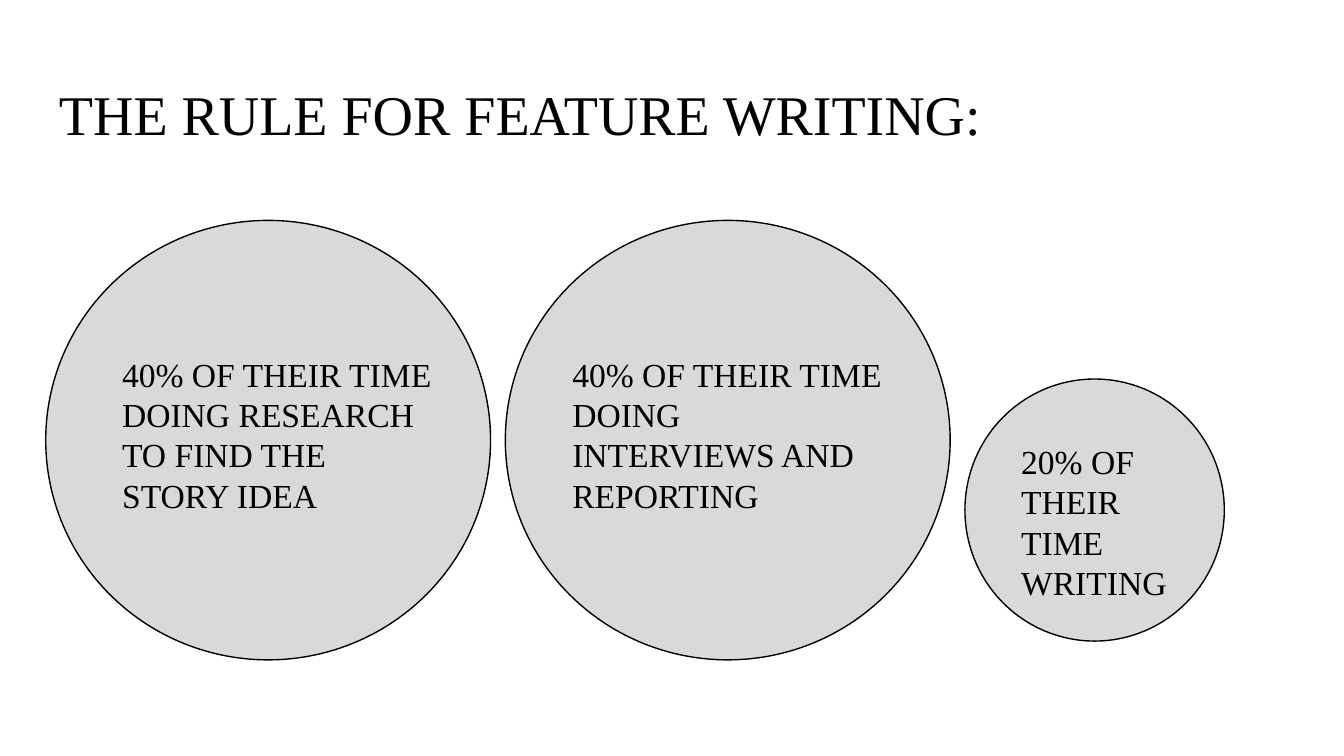
from dataclasses import dataclass

from pptx import Presentation
from pptx.dml import color
from pptx.enum import shapes, text
from pptx.util import Inches, Pt

WIDTH = 10
HEIGHT = WIDTH * 9 / 16
MARGIN = 0.034 * WIDTH
GAP = 0.011 * WIDTH
FONT = "Times New Roman"
BLACK, GREY = "000000", "D9D9D9"


@dataclass(frozen=True)
class Box:
    """A rectangle in inches."""

    left: float
    top: float
    width: float
    height: float

    def lengths(self) -> list[int]:
        """Return the rectangle as slide lengths."""
        return [Inches(n) for n in (self.left, self.top, self.width, self.height)]


@dataclass(frozen=True)
class Share:
    """A circle for a share of time, with its label's offset and width."""

    label: str
    top: float
    width: float
    height: float
    label_left: float
    label_top: float
    label_width: float


SHARES = (
    Share("40% OF THEIR TIME DOING RESEARCH TO FIND THE STORY IDEA",
          1.64, 3.31, 3.27, 0.47, 2.53, 2.52),
    Share("40% OF THEIR TIME DOING INTERVIEWS AND REPORTING",
          1.64, 3.31, 3.27, 0.4, 2.53, 2.52),
    Share("20% OF THEIR TIME WRITING",
          2.82, 1.93, 1.95, 0.32, 3.18, 1.37),
)


def rgb(value: str) -> color.RGBColor:
    """Turn a hex string into a colour."""
    return color.RGBColor.from_string(value)


def add_label(slide, words: str, box: Box, size: float) -> None:
    """Add wrapped text at the top of a box."""
    frame = slide.shapes.add_textbox(*box.lengths()).text_frame
    frame.word_wrap = True
    frame.vertical_anchor = text.MSO_ANCHOR.TOP
    frame.margin_left = frame.margin_right = Inches(0.1)
    frame.margin_top = frame.margin_bottom = Inches(0.1)
    paragraph = frame.paragraphs[0]
    paragraph.text = words
    paragraph.font.name = FONT
    paragraph.font.size = Pt(size)
    paragraph.font.color.rgb = rgb(BLACK)


def add_circle(slide, box: Box) -> None:
    """Add a grey circle with a thin black outline."""
    shape = slide.shapes.add_shape(shapes.MSO_SHAPE.OVAL, *box.lengths())
    shape.shadow.inherit = False
    shape.fill.solid()
    shape.fill.fore_color.rgb = rgb(GREY)
    shape.line.color.rgb = rgb(BLACK)
    shape.line.width = Pt(0.75)


def add_shares(slide) -> None:
    """Lay the circles out in a row with equal gaps."""
    left = MARGIN
    for share in SHARES:
        add_circle(slide, Box(left, share.top, share.width, share.height))
        label_box = Box(left + share.label_left, share.label_top, share.label_width, 1.59)
        add_label(slide, share.label, label_box, 18)
        left += share.width + GAP


def main() -> None:
    """Build and save the slide."""
    presentation = Presentation()
    presentation.slide_width = Inches(WIDTH)
    presentation.slide_height = Inches(HEIGHT)
    slide = presentation.slides.add_slide(presentation.slide_layouts[6])
    title_box = Box(MARGIN, 0.49, WIDTH - 2 * MARGIN, 0.63)
    add_label(slide, "THE RULE FOR FEATURE WRITING:", title_box, 30)
    add_shares(slide)
    presentation.save("out.pptx")


if __name__ == "__main__":
    main()
